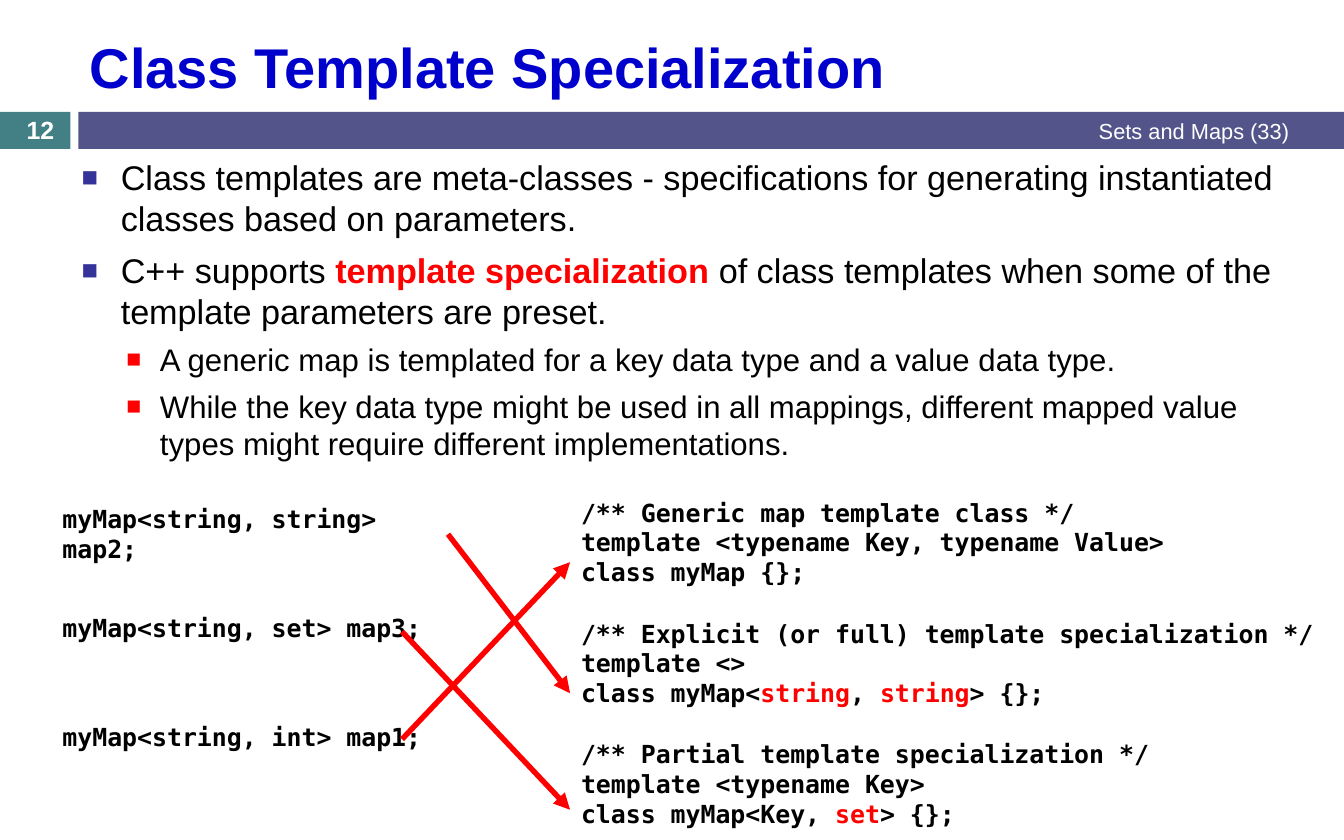
from dataclasses import dataclass

from lxml import etree
from pptx import Presentation
from pptx.dml.color import RGBColor
from pptx.enum.shapes import MSO_CONNECTOR, MSO_SHAPE
from pptx.enum.text import MSO_ANCHOR, PP_ALIGN
from pptx.oxml.ns import qn
from pptx.slide import Slide
from pptx.util import Inches, Pt

RECTANGLE = MSO_SHAPE.RECTANGLE
STRAIGHT = MSO_CONNECTOR.STRAIGHT
TOP, MIDDLE = MSO_ANCHOR.TOP, MSO_ANCHOR.MIDDLE
LEFT, CENTER, RIGHT = PP_ALIGN.LEFT, PP_ALIGN.CENTER, PP_ALIGN.RIGHT

BLACK = RGBColor(0x00, 0x00, 0x00)
WHITE = RGBColor(0xFF, 0xFF, 0xFF)
RED = RGBColor(0xFF, 0x00, 0x00)
TITLE_BLUE = RGBColor(0x00, 0x00, 0xCC)
BULLET_BLUE = RGBColor(0x33, 0x33, 0x99)
TEAL = RGBColor(0x43, 0x80, 0x86)
INDIGO = RGBColor(0x53, 0x54, 0x8A)

CODE_TOP = 4.39
CODE_STEP = 1.08
USE_TOP = 4.45
USE_STEP = 0.97

BULLETS = [
    (0, 7, ["Class templates are meta-classes - specifications for generating "
            "instantiated classes based on parameters."]),
    (0, 7, ["C++ supports ", ("template specialization", {"color": RED, "bold": True}),
            " of class templates when some of the template parameters are preset."]),
    (1, 5.5, ["A generic map is templated for a key data type and a value data type."]),
    (1, 6, ["While the key data type might be used in all mappings, different "
            "mapped value types might require different implementations."]),
]
LEVELS = [
    {"size": 22, "margin": 0.35, "hanging": 0.35, "color": BULLET_BLUE},
    {"size": 20, "margin": 0.7, "hanging": 0.3, "color": RED},
]
RED_WORD = {"color": RED}
DEFINITIONS = [
    [["/** Generic map template class */"],
     ["template <typename Key, typename Value>"],
     ["class myMap {};"]],
    [["/** Explicit (or full) template specialization */"],
     ["template <>"],
     ["class myMap<", ("string", RED_WORD), ", ", ("string", RED_WORD), "> {};"]],
    [["/** Partial template specialization */"],
     ["template <typename Key>"],
     ["class myMap<Key, ", ("set", RED_WORD), "> {};"]],
]
USES = ["myMap<string, string> map2;", "myMap<string, set> map3;", "myMap<string, int> map1;"]
ARROWS = [
    ((4, 4.77), (5.09, 6.19)),
    ((3.59, 5.64), (5.09, 7.23)),
    ((3.59, 6.6), (5.09, 5.02)),
]


@dataclass
class PageBuilder:
    page: Slide
    font: str = "Arial"
    code_font: str = "DejaVu Sans Mono"

    def add_spans(self, para, spans, size, **style):
        for item in spans:
            text, change = item if isinstance(item, tuple) else (item, {})
            look = {"color": BLACK, "bold": False, "name": self.font} | style | change
            span = para.add_run()
            span.text = text
            span.font.color.rgb = look.pop("color")
            for key, value in (look | {"size": Pt(size)}).items():
                setattr(span.font, key, value)

    def bar(self, left, width, color):
        shape = self.page.shapes.add_shape(
            RECTANGLE, Inches(left), Inches(1), Inches(width), Inches(0.33))
        shape.shadow.inherit = False
        shape.fill.solid()
        shape.fill.fore_color.rgb = color
        shape.line.fill.background()

    def title(self, text):
        box = self.page.shapes.title
        place = {"left": 0.7, "top": 0.19, "width": 10.91, "height": 0.8}
        for key, value in place.items():
            setattr(box, key, Inches(value))
        box.text_frame.vertical_anchor = MIDDLE
        para = box.text_frame.paragraphs[0]
        para.alignment = LEFT
        self.add_spans(para, [text], 36, color=TITLE_BLUE, bold=True)

    def text(self, place, lines, size, anchor=TOP, align=LEFT, **style):
        box = self.page.shapes.add_textbox(*map(Inches, place))
        frame = box.text_frame
        frame.word_wrap = True
        frame.vertical_anchor = anchor
        for index, spans in enumerate(lines):
            para = frame.add_paragraph() if index else frame.paragraphs[0]
            para.alignment = align
            self.add_spans(para, spans, size, **style)

    def code(self, place, lines):
        self.text(place, lines, 16, name=self.code_font, bold=True)

    def bullets(self, place, items):
        frame = self.page.shapes.add_textbox(*map(Inches, place)).text_frame
        frame.word_wrap = True
        for index, (level, space, spans) in enumerate(items):
            para = frame.add_paragraph() if index else frame.paragraphs[0]
            para.level = level
            para.space_before = Pt(space)
            form = LEVELS[level]
            self.add_spans(para, spans, form["size"])
            props = para._p.get_or_add_pPr()
            props.set("marL", str(Inches(form["margin"])))
            props.set("indent", str(-Inches(form["hanging"])))
            color = etree.SubElement(props, qn("a:buClr"))
            etree.SubElement(color, qn("a:srgbClr"), val=str(form["color"]))
            etree.SubElement(props, qn("a:buSzPct"), val="80000")
            etree.SubElement(props, qn("a:buFont"), typeface=self.font)
            etree.SubElement(props, qn("a:buChar"), char="■")

    def arrow(self, start, end):
        line = self.page.shapes.add_connector(STRAIGHT, *map(Inches, start + end))
        line.line.color.rgb = RED
        line.line.width = Pt(3.5)
        props = line._element.spPr
        etree.SubElement(props.find(qn("a:ln")), qn("a:tailEnd"), type="triangle")
        etree.SubElement(props, qn("a:effectLst"))


def main():
    deck = Presentation()
    deck.slide_width = Inches(12)
    deck.slide_height = Inches(7.5)
    builder = PageBuilder(deck.slides.add_slide(deck.slide_layouts[5]))

    builder.bar(0, 0.63, TEAL)
    builder.bar(0.7, 11.3, INDIGO)
    builder.title("Class Template Specialization")
    builder.bullets((0.63, 1.35, 10.99, 3.33), BULLETS)
    builder.text((4.5, 0.99, 7.11, 0.35), [["Sets and Maps (33)"]], 14,
                 MIDDLE, RIGHT, color=WHITE)
    builder.text((0, 1.01, 0.72, 0.3), [["12"]], 16, MIDDLE, CENTER,
                 color=WHITE, bold=True)
    for row, lines in enumerate(DEFINITIONS):
        builder.code((5.09, CODE_TOP + row * CODE_STEP, 6.77, 0.91), lines)
    for row, use in enumerate(USES):
        builder.code((0.46, USE_TOP + row * USE_STEP, 3.54, 0.37), [[use]])
    for start, end in ARROWS:
        builder.arrow(start, end)

    deck.save("out.pptx")


if __name__ == "__main__":
    main()
